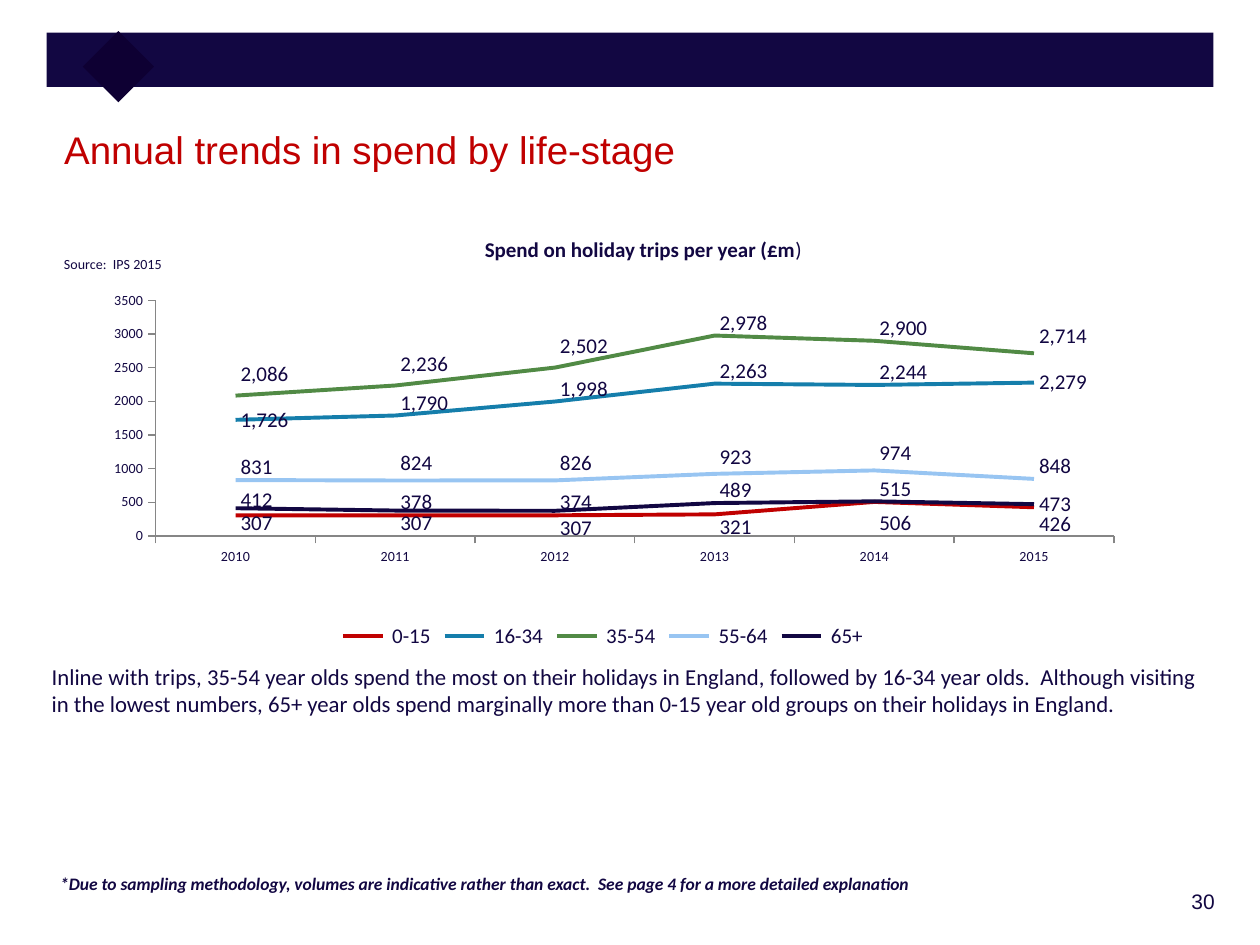
import pptx
import pptx.chart.data
import pptx.dml.color
import pptx.enum.chart
import pptx.enum.shapes
import pptx.enum.text
import pptx.oxml
import pptx.oxml.ns
import pptx.util

NAVY = pptx.dml.color.RGBColor(0x12, 0x07, 0x42)
DARK = pptx.dml.color.RGBColor(0x0E, 0x00, 0x33)
RED = pptx.dml.color.RGBColor(0xC0, 0x00, 0x00)
TEAL = pptx.dml.color.RGBColor(0x15, 0x7E, 0xAB)
GREEN = pptx.dml.color.RGBColor(0x51, 0x8A, 0x45)
SKY = pptx.dml.color.RGBColor(0x98, 0xC5, 0xF2)
GREY = pptx.dml.color.RGBColor(0x86, 0x86, 0x86)

SLIDE_WIDTH = pptx.util.Inches(10)
SLIDE_HEIGHT = pptx.util.Inches(7.5)

YEARS = ["2010", "2011", "2012", "2013", "2014", "2015"]
LIFE_STAGES = [
    (" 0-15", RED, [307, 307, 307, 321, 506, 426], [0.02, 0.02, 0.03, 0.03, 0.05, 0.04]),
    (" 16-34", TEAL, [1726, 1790, 1998, 2263, 2244, 2279], [0, -0.03, -0.03, -0.03, -0.03, 0]),
    (" 35-54", GREEN, [2086, 2236, 2502, 2978, 2900, 2714], [-0.05, -0.05, -0.05, -0.03, -0.03, -0.04]),
    (" 55-64", SKY, [831, 824, 826, 923, 974, 848], [-0.03, -0.04, -0.04, -0.04, -0.04, -0.03]),
    (" 65+", NAVY, [412, 378, 374, 489, 515, 473], [-0.02, -0.02, -0.02, -0.03, -0.03, 0]),
]


def place(left, top, width, height):
    return (
        int(SLIDE_WIDTH * left / 100),
        int(SLIDE_HEIGHT * top / 100),
        int(SLIDE_WIDTH * width / 100),
        int(SLIDE_HEIGHT * height / 100),
    )


def set_font(font, size, color=NAVY, name="Calibri", bold=False, italic=False):
    font.name = name
    font.size = pptx.util.Pt(size)
    font.color.rgb = color
    font.bold = bold
    font.italic = italic


def add_text(slide, area, text, size, align=pptx.enum.text.PP_ALIGN.LEFT, **style):
    frame = slide.shapes.add_textbox(*place(*area)).text_frame
    frame.word_wrap = True
    paragraph = frame.paragraphs[0]
    paragraph.text = text
    paragraph.alignment = align
    set_font(paragraph.font, size, **style)
    return frame


def add_block(slide, area, color, rotation=0):
    shape = slide.shapes.add_shape(pptx.enum.shapes.MSO_SHAPE.RECTANGLE, *place(*area))
    shape.rotation = rotation
    shape.shadow.inherit = False
    shape.fill.solid()
    shape.fill.fore_color.rgb = color
    shape.line.fill.background()


def set_title(slide, area, text):
    title = slide.shapes.title
    title.left, title.top, title.width, title.height = place(*area)
    frame = title.text_frame
    frame.text = text
    frame.vertical_anchor = pptx.enum.text.MSO_ANCHOR.TOP
    paragraph = frame.paragraphs[0]
    paragraph.alignment = pptx.enum.text.PP_ALIGN.LEFT
    set_font(paragraph.font, 22, RED, "Arial")


def manual_layout(target="", **values):
    parts = f'<c:layoutTarget val="{target}"/>' if target else ""
    if target:
        parts += '<c:xMode val="edge"/><c:yMode val="edge"/>'
    parts += "".join(f'<c:{key} val="{value}"/>' for key, value in values.items())
    namespace = pptx.oxml.ns.nsdecls("c")
    return pptx.oxml.parse_xml(
        f"<c:layout {namespace}><c:manualLayout>{parts}</c:manualLayout></c:layout>"
    )


def format_axis(axis):
    axis.has_major_gridlines = False
    axis.major_tick_mark = pptx.enum.chart.XL_TICK_MARK.OUTSIDE
    axis.minor_tick_mark = pptx.enum.chart.XL_TICK_MARK.NONE
    axis.format.line.color.rgb = GREY
    axis.format.line.width = pptx.util.Pt(0.75)
    set_font(axis.tick_labels.font, 8)


def format_series(series, color, offsets):
    series.smooth = False
    series.marker.style = pptx.enum.chart.XL_MARKER_STYLE.NONE
    series.format.line.color.rgb = color
    series.format.line.width = pptx.util.Pt(2.25)
    labels = series.data_labels
    labels.show_value = True
    labels.position = pptx.enum.chart.XL_LABEL_POSITION.RIGHT
    set_font(labels.font, 12)
    for index in range(len(offsets)):
        label = series.points[index].data_label
        label.position = pptx.enum.chart.XL_LABEL_POSITION.RIGHT
        set_font(label.font, 12)
    point_labels = series._element.iter(pptx.oxml.ns.qn("c:dLbl"))
    for element, offset in zip(list(point_labels), offsets):
        element.insert(1, manual_layout(x=0, y=offset))


def add_spend_chart(slide, area):
    data = pptx.chart.data.CategoryChartData(number_format="#,##0")
    data.categories = YEARS
    for name, _, values, _ in LIFE_STAGES:
        data.add_series(name, values)
    chart = slide.shapes.add_chart(
        pptx.enum.chart.XL_CHART_TYPE.LINE, *place(*area), data
    ).chart
    chart.has_title = False
    set_font(chart.font, 18)
    format_axis(chart.category_axis)
    format_axis(chart.value_axis)
    chart.value_axis.minimum_scale = 0
    chart.value_axis.maximum_scale = 3500
    chart.value_axis.major_unit = 500
    chart.value_axis.tick_labels.number_format = "0"
    chart.value_axis.tick_labels.number_format_is_linked = False
    chart.has_legend = True
    chart.legend.position = pptx.enum.chart.XL_LEGEND_POSITION.BOTTOM
    chart.legend.include_in_layout = False
    set_font(chart.legend.font, 12)
    chart.plots[0].vary_by_categories = False
    for series, (_, color, _, offsets) in zip(chart.plots[0].series, LIFE_STAGES):
        format_series(series, color, offsets)
    plot_area = chart._chartSpace.chart.plotArea
    for layout in plot_area.findall(pptx.oxml.ns.qn("c:layout")):
        plot_area.remove(layout)
    plot_area.insert(0, manual_layout("inner", x=0.08, y=0.16, w=0.9, h=0.56))


def main():
    presentation = pptx.Presentation()
    presentation.slide_width = SLIDE_WIDTH
    presentation.slide_height = SLIDE_HEIGHT
    slide = presentation.slides.add_slide(presentation.slide_layouts[5])
    align = pptx.enum.text.PP_ALIGN

    add_text(slide, (85.3, 93.33, 12.1, 4.8), "30", 12, align.RIGHT, name="Arial")
    add_block(slide, (3.7, 3.47, 92.6, 5.73), NAVY)
    add_block(slide, (7.4, 4.4, 4, 5.33), DARK, 45)
    set_title(slide, (4.1, 12.67, 92.1, 8.13), "Annual trends in spend by life-stage")
    add_spend_chart(slide, (5.6, 24.67, 84.5, 44.53))

    heading = add_text(slide, (28.2, 24.4, 45.7, 3.87),
                       "Spend on holiday trips per year (£m", 12, align.CENTER, bold=True)
    closing = heading.paragraphs[0].add_run()
    closing.text = ")"
    closing.font.bold = False

    comment = add_text(
        slide, (3.7, 69.47, 92.1, 20.13),
        "Inline with trips, 35-54 year olds spend the most on their holidays in England, "
        "followed by 16-34 year olds.  Although visiting in the lowest numbers, 65+ year olds "
        "spend marginally more than 0-15 year old groups on their holidays in England.",
        13, align.JUSTIFY)
    comment.margin_left = pptx.util.Inches(0.04)

    add_text(slide, (4.1, 26.4, 10.3, 2.4), "Source:  IPS 2015", 8)
    add_text(
        slide, (3.8, 91.73, 89.7, 3.6),
        "*Due to sampling methodology, volumes are indicative rather than exact.  "
        "See page 4 for a more detailed explanation", 10, bold=True, italic=True)

    presentation.save("out.pptx")


if __name__ == "__main__":
    main()
